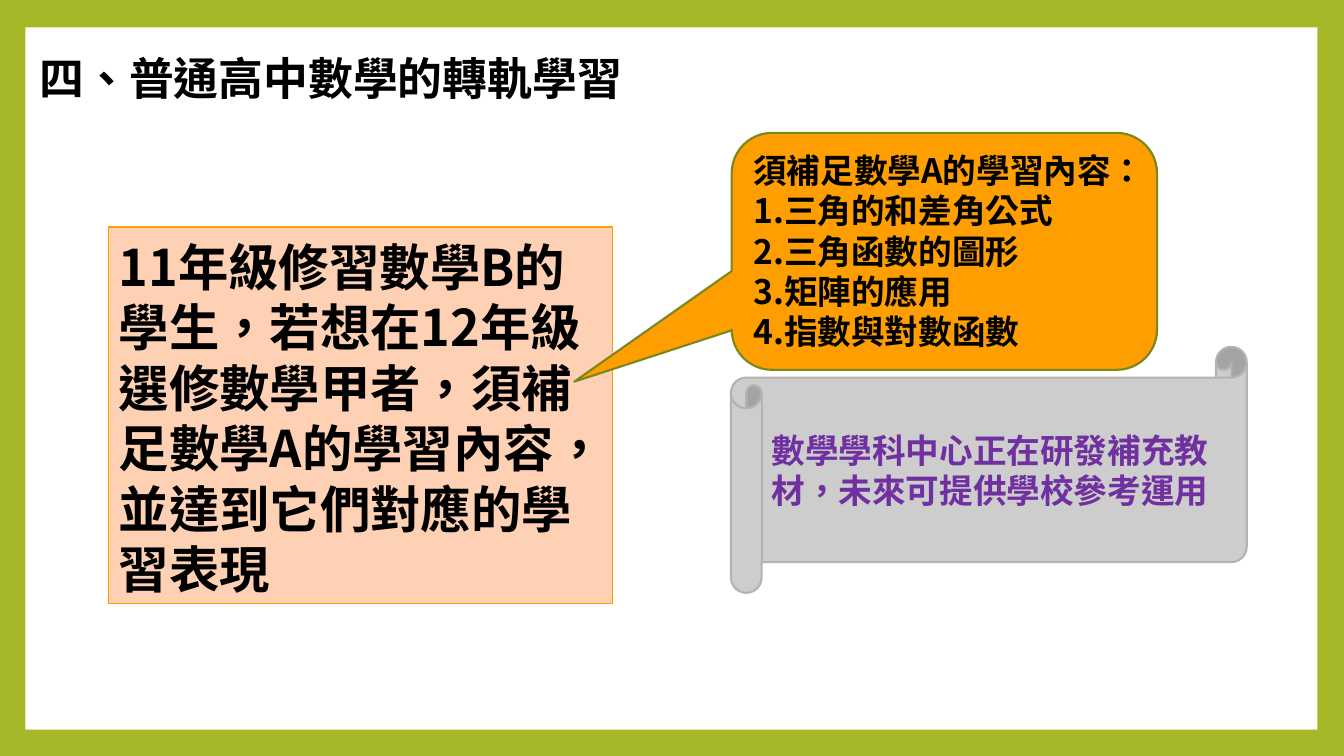
from dataclasses import dataclass

from lxml import etree
from pptx import Presentation
from pptx.dml.color import RGBColor
from pptx.enum import shapes, text
from pptx.oxml import ns
from pptx.util import Cm, Pt

FONT = "Noto Sans CJK SC"
BLACK = "000000"


@dataclass
class Panel:
    kind: shapes.MSO_SHAPE
    at: tuple[float, float, float, float]  # left, top, width, height in cm
    fill: str
    line: str | None = None
    line_width: float = 1.5
    adjustments: tuple[float, ...] = ()
    lines: tuple[str, ...] = ()
    size: int = 24
    color: str = BLACK
    anchor: text.MSO_ANCHOR = text.MSO_ANCHOR.TOP
    top_inset: float = 0.13


def rgb(value: str) -> RGBColor:
    return RGBColor.from_string(value)


def write(frame, lines, *, size, color=BLACK, anchor=text.MSO_ANCHOR.MIDDLE, spacing=None):
    """Fill a text frame with bold, left-aligned paragraphs."""
    frame.word_wrap = True
    frame.auto_size = text.MSO_AUTO_SIZE.NONE
    frame.vertical_anchor = anchor
    for index, line in enumerate(lines):
        paragraph = frame.add_paragraph() if index else frame.paragraphs[0]
        paragraph.alignment = text.PP_ALIGN.LEFT
        paragraph.line_spacing = spacing
        run = paragraph.add_run()
        run.text = line
        run.font.size = Pt(size)
        run.font.bold = True
        run.font.color.rgb = rgb(color)
        run.font.name = FONT
        # East Asian font and language
        properties = run._r.get_or_add_rPr()
        properties.set("lang", "zh-TW")
        etree.SubElement(properties, ns.qn("a:ea"), typeface=FONT)


def draw(slide, panel: Panel):
    shape = slide.shapes.add_shape(panel.kind, *map(Cm, panel.at))
    shape.shadow.inherit = False
    shape.fill.solid()
    shape.fill.fore_color.rgb = rgb(panel.fill)
    if panel.line:
        shape.line.color.rgb = rgb(panel.line)
        shape.line.width = Pt(panel.line_width)
    else:
        shape.line.fill.background()
    for index, value in enumerate(panel.adjustments):
        shape.adjustments[index] = value
    if panel.lines:
        shape.text_frame.margin_top = Cm(panel.top_inset)
        write(shape.text_frame, panel.lines, size=panel.size, color=panel.color,
              anchor=panel.anchor, spacing=Pt(panel.size * 1.2))
    return shape


PAGE = Panel(shapes.MSO_SHAPE.RECTANGLE, (0.64, 0.69, 32.56, 17.7), "FFFFFF")
PANELS = [
    # Who has to catch up
    Panel(shapes.MSO_SHAPE.RECTANGLE, (2.74, 5.72, 12.7, 9.5), "FFD1B4", "FE9E00", 0.79,
          lines=("11年級修習數學B的學生，若想在12年級選修數學甲者，"
                 "須補足數學A的學習內容，並達到它們對應的學習表現",),
          size=36, top_inset=0.23),
    # Topics to catch up on
    Panel(shapes.MSO_SHAPE.ROUNDED_RECTANGULAR_CALLOUT, (18.44, 3.35, 10.72, 5.97),
          "FE9E00", "7B871D", adjustments=(-0.87, 0.55, 0.17),
          lines=("須補足數學A的學習內容：", "1.三角的和差角公式", "2.三角函數的圖形",
                 "3.矩陣的應用", "4.指數與對數函數")),
    # Supplementary material
    Panel(shapes.MSO_SHAPE.HORIZONTAL_SCROLL, (18.42, 8.74, 13, 6.2), "CDCDCD", "B3B3B5",
          lines=("數學學科中心正在研發補充教材，未來可提供學校參考運用",),
          color="7030A0", anchor=text.MSO_ANCHOR.MIDDLE),
]


def main():
    deck = Presentation()
    deck.slide_width, deck.slide_height = Cm(33.87), Cm(19.05)
    slide = deck.slides.add_slide(deck.slide_layouts[5])

    # Green border around a white page, behind the title
    slide.background.fill.solid()
    slide.background.fill.fore_color.rgb = rgb("A6B727")
    page = draw(slide, PAGE)
    slide.shapes._spTree.insert(2, page._element)

    # Title
    title = slide.shapes.title
    title.left, title.top, title.width, title.height = map(Cm, (0.74, 0.74, 21.59, 2.59))
    write(title.text_frame, ["四、普通高中數學的轉軌學習"], size=32, spacing=0.9)

    for panel in PANELS:
        draw(slide, panel)
    deck.save("out.pptx")


if __name__ == "__main__":
    main()
